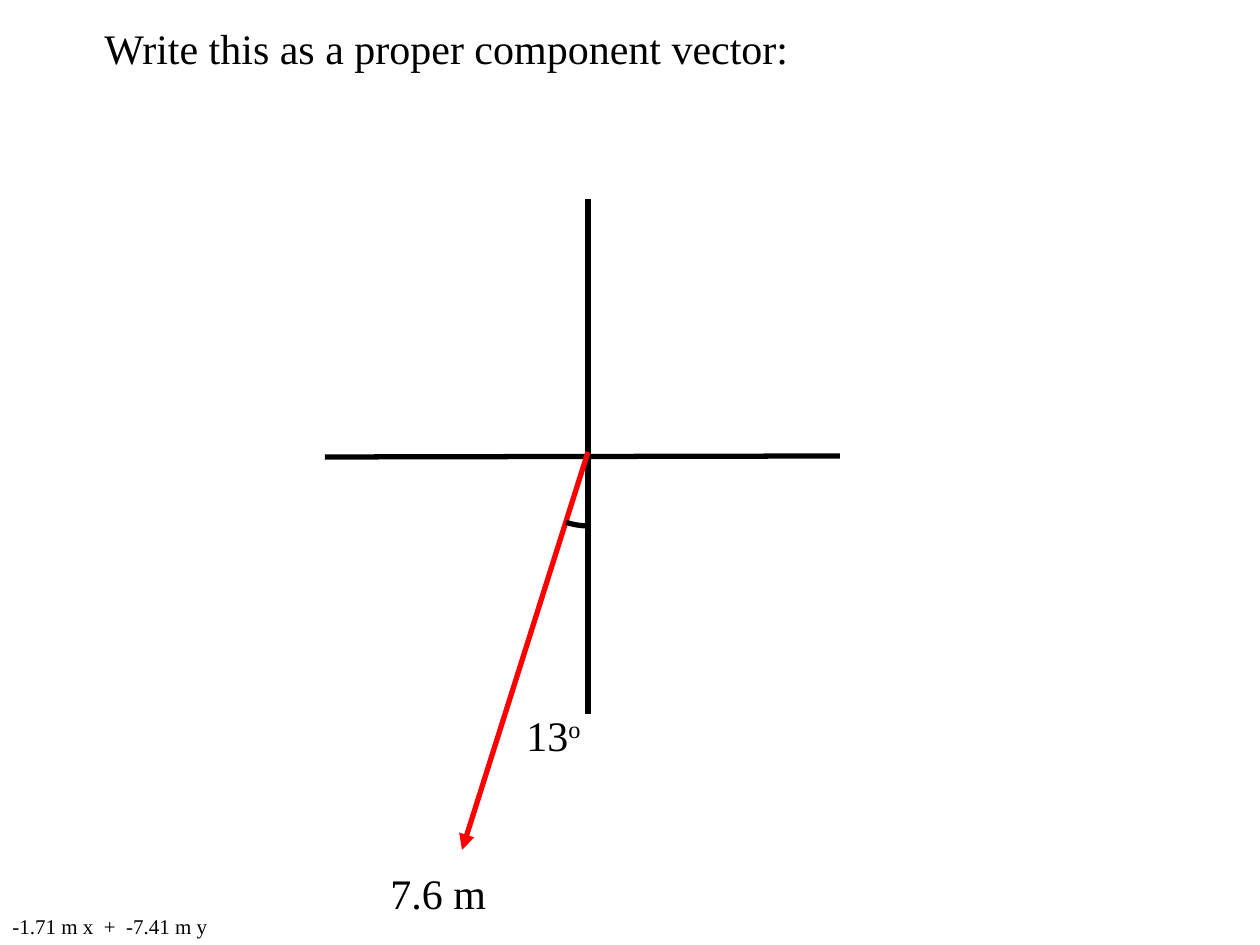
import math
from dataclasses import dataclass

from lxml import etree
from pptx import Presentation
from pptx.dml.color import RGBColor
from pptx.enum.shapes import MSO_CONNECTOR
from pptx.enum.text import MSO_AUTO_SIZE
from pptx.oxml.ns import qn
from pptx.util import Emu, Pt

STRAIGHT = MSO_CONNECTOR.STRAIGHT
GROW = MSO_AUTO_SIZE.SHAPE_TO_FIT_TEXT
EMU_PER_PX = 914400 / 126
FONT = "Times New Roman"
BLACK, RED = "000000", "FF0000"
LINE_WIDTH = Pt(3)
ARC_CENTER, ARC_RADIUS, ARC_DEGREES, ARC_STEPS = (589, 452), 74, 18, 12


@dataclass
class Line:
    start: tuple[int, int]
    end: tuple[int, int]
    color: str = BLACK
    arrow: bool = False


@dataclass
class Label:
    left: int
    top: int
    width: int
    height: int
    text: str
    size: int = 24
    superscript: str = ""


LINES = [
    Line((325, 457), (840, 456)),
    Line((588, 199), (588, 714)),
    Line((588, 452), (462, 850), RED, arrow=True),
]
ANGLE_LABEL = Label(514, 703, 82, 63, "13", superscript="o")
LABELS = [
    Label(92, 16, 716, 63, "Write this as a proper component vector:"),
    Label(378, 861, 122, 63, "7.6 m"),
    Label(0, 907, 223, 38, "-1.71 m x  +  -7.41 m y", size=12),
]


def px(value: float) -> Emu:
    return Emu(round(value * EMU_PER_PX))


def rgb(color: str) -> RGBColor:
    return RGBColor.from_string(color)


def draw_line(shapes, line: Line) -> None:
    s = shapes.add_connector(STRAIGHT, *map(px, line.start + line.end))
    s.line.color.rgb = rgb(line.color)
    s.line.width = LINE_WIDTH
    if line.arrow:
        ln = s.line._get_or_add_ln()
        etree.SubElement(ln, qn("a:tailEnd"), type="triangle")
    etree.SubElement(s._element.spPr, qn("a:effectLst"))


def draw_angle_arc(shapes) -> None:
    """Sweep clockwise from straight down to the vector."""
    cx, cy = ARC_CENTER
    angles = [math.radians(ARC_DEGREES * i / ARC_STEPS) for i in range(ARC_STEPS + 1)]
    points = [(px(cx - ARC_RADIUS * math.sin(a)), px(cy + ARC_RADIUS * math.cos(a)))
              for a in angles]
    builder = shapes.build_freeform(*points[0])
    builder.add_line_segments(points[1:], close=False)
    s = builder.convert_to_shape()
    s.shadow.inherit = False
    s.fill.background()
    s.line.color.rgb = rgb(BLACK)
    s.line.width = LINE_WIDTH


def draw_label(shapes, label: Label) -> None:
    s = shapes.add_textbox(px(label.left), px(label.top), px(label.width), px(label.height))
    tf = s.text_frame
    tf.word_wrap = False
    tf.auto_size = GROW
    p = tf.paragraphs[0]
    for text, baseline in ((label.text, "0"), (label.superscript, "30000")):
        if not text:
            continue
        r = p.add_run()
        r.text = text
        r.font.name = FONT
        r.font.size = Pt(label.size)
        r.font.color.rgb = rgb(BLACK)
        r._r.get_or_add_rPr().set("baseline", baseline)


def main() -> None:
    prs = Presentation()
    prs.slide_width, prs.slide_height = px(1260), px(945)
    shapes = prs.slides.add_slide(prs.slide_layouts[6]).shapes
    for line in LINES:
        draw_line(shapes, line)
    draw_label(shapes, ANGLE_LABEL)
    draw_angle_arc(shapes)
    for label in LABELS:
        draw_label(shapes, label)
    prs.save("out.pptx")


if __name__ == "__main__":
    main()
